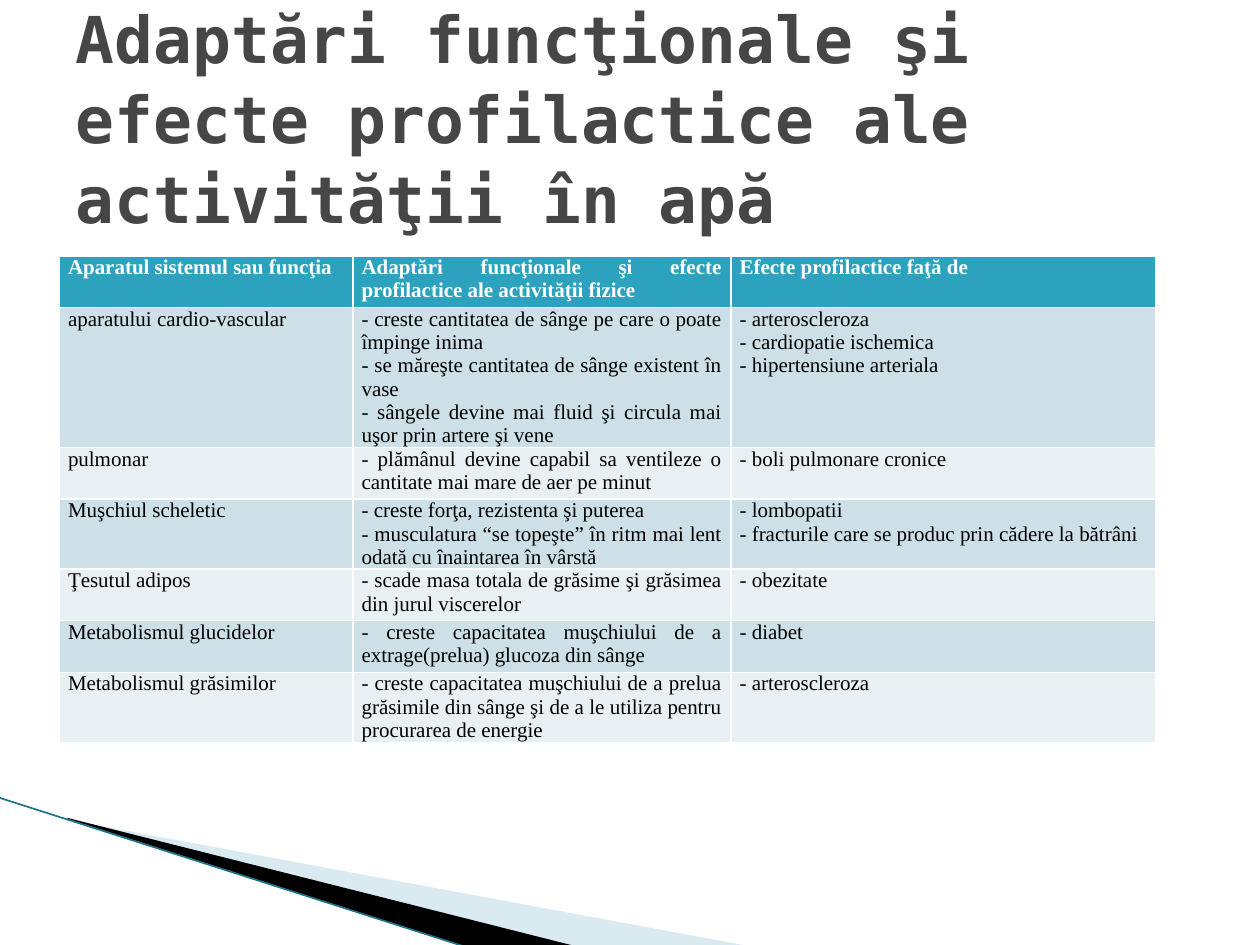
from lxml.etree import SubElement
from pptx import Presentation
from pptx.dml.color import RGBColor
from pptx.enum.shapes import MSO_CONNECTOR as Connector
from pptx.enum.text import MSO_ANCHOR as Anchor, MSO_AUTO_SIZE as AutoSize, PP_ALIGN as Align
from pptx.oxml.ns import qn
from pptx.util import Inches, Pt

COLUMNS, ROWS = 100, 75
CELL = Inches(0.1)
COLORS = {
    "title": "464646",
    "header": "2DA2BF",
    "header_text": "FFFFFF",
    "odd_row": "CDE0E8",
    "even_row": "E8F0F4",
    "text": "000000",
    "light_wedge": "A0CBDC",
    "dark_wedge": "000000",
    "edge": "1F7389",
}
TITLE = "Adaptări funcţionale şi efecte profilactice ale activităţii în apă"
TABLE_COLUMNS = (23.3, 30, 33.7)
TABLE_ROW = 4.1
TABLE_ROWS = [
    (
        "Aparatul sistemul sau funcţia",
        "Adaptări funcţionale şi efecte profilactice ale activităţii fizice",
        "Efecte profilactice faţă de",
    ),
    (
        "aparatului cardio-vascular",
        "- creste cantitatea de sânge pe care o poate împinge inima\n"
        "- se măreşte cantitatea de sânge existent în vase\n"
        "- sângele devine mai fluid şi circula mai uşor prin artere şi vene",
        "- arteroscleroza\n- cardiopatie ischemica\n- hipertensiune arteriala",
    ),
    (
        "pulmonar",
        "- plămânul devine capabil sa ventileze o cantitate mai mare de aer pe minut",
        "- boli pulmonare cronice",
    ),
    (
        "Muşchiul scheletic",
        "- creste forţa, rezistenta şi puterea\n"
        "- musculatura “se topeşte” în ritm mai lent odată cu înaintarea în vârstă",
        "- lombopatii\n- fracturile care se produc prin cădere la bătrâni",
    ),
    (
        "Ţesutul adipos",
        "- scade masa totala de grăsime şi grăsimea din jurul viscerelor",
        "- obezitate",
    ),
    (
        "Metabolismul glucidelor",
        "- creste capacitatea muşchiului de a extrage(prelua) glucoza din sânge",
        "- diabet",
    ),
    (
        "Metabolismul grăsimilor",
        "- creste capacitatea muşchiului de a prelua grăsimile din sânge "
        "şi de a le utiliza pentru procurarea de energie",
        "- arteroscleroza",
    ),
]


def grid(*values):
    return [round(value * CELL) for value in values]


def color(name):
    return RGBColor.from_string(COLORS[name])


def format_runs(paragraph, font_name, size, color_name, bold):
    for run in paragraph.runs:
        run.font.name = font_name
        run.font.size = Pt(size)
        run.font.bold = bold
        run.font.color.rgb = color(color_name)


def add_wedge(slide, points, color_name, opacity=100):
    start, *others = [grid(*point) for point in points]
    builder = slide.shapes.build_freeform(*start)
    builder.add_line_segments(others, close=True)
    shape = builder.convert_to_shape()
    shape.shadow.inherit = False
    shape.fill.solid()
    shape.fill.fore_color.rgb = color(color_name)
    shape.line.fill.background()
    if opacity < 100:
        fill_color = shape.fill._xPr.find(qn("a:solidFill"))[0]
        SubElement(fill_color, qn("a:alpha")).set("val", str(opacity * 1000))


def add_edge(slide, start, end):
    line = slide.shapes.add_connector(Connector.STRAIGHT, *grid(*start, *end))
    line.line.color.rgb = color("edge")
    line.line.width = Pt(0.95)
    SubElement(line._element.spPr, qn("a:effectLst"))


def fill_cell(cell, text, fill_name, text_color, bold):
    cell.fill.solid()
    cell.fill.fore_color.rgb = color(fill_name)
    cell.margin_left = cell.margin_right = Inches(0.07)
    cell.margin_top = cell.margin_bottom = 0
    cell.text_frame.text = text
    for paragraph in cell.text_frame.paragraphs:
        paragraph.alignment = Align.JUSTIFY
        format_runs(paragraph, "Times New Roman", 12, text_color, bold)


def add_effects_table(slide):
    place = grid(4.7, 20.3, sum(TABLE_COLUMNS), TABLE_ROW * len(TABLE_ROWS))
    table = slide.shapes.add_table(len(TABLE_ROWS), len(TABLE_COLUMNS), *place).table
    for column, width in zip(table.columns, grid(*TABLE_COLUMNS)):
        column.width = width
    for index, (row, texts) in enumerate(zip(table.rows, TABLE_ROWS)):
        header = index == 0
        fill_name = "header" if header else "odd_row" if index % 2 else "even_row"
        text_color = "header_text" if header else "text"
        for cell, text in zip(row.cells, texts):
            fill_cell(cell, text, fill_name, text_color, header)


def set_title(slide):
    title = slide.shapes.title
    title.left, title.top, title.width, title.height = grid(5, 3, 90, 12.5)
    frame = title.text_frame
    frame.text = TITLE
    frame.word_wrap = True
    frame.auto_size = AutoSize.NONE
    frame.vertical_anchor = Anchor.MIDDLE
    paragraph = frame.paragraphs[0]
    paragraph.alignment = Align.LEFT
    paragraph.line_spacing = 1.03
    format_runs(paragraph, "DejaVu Sans Mono", 36.9, "title", True)


def main():
    presentation = Presentation()
    presentation.slide_width, presentation.slide_height = grid(COLUMNS, ROWS)
    slide = presentation.slides.add_slide(presentation.slide_layouts[5])
    add_wedge(slide, [(5.5, 65.1), (59.5, 75.1), (45.6, 75.1), (5.5, 65)], "light_wedge", 40)
    add_wedge(slide, [(5.3, 64.9), (45.7, 75.1), (37.2, 75.2), (5.4, 65)], "dark_wedge")
    add_edge(slide, (-0.1, 63.3), (37.1, 75.2))
    add_effects_table(slide)
    set_title(slide)
    presentation.save("out.pptx")


if __name__ == "__main__":
    main()
